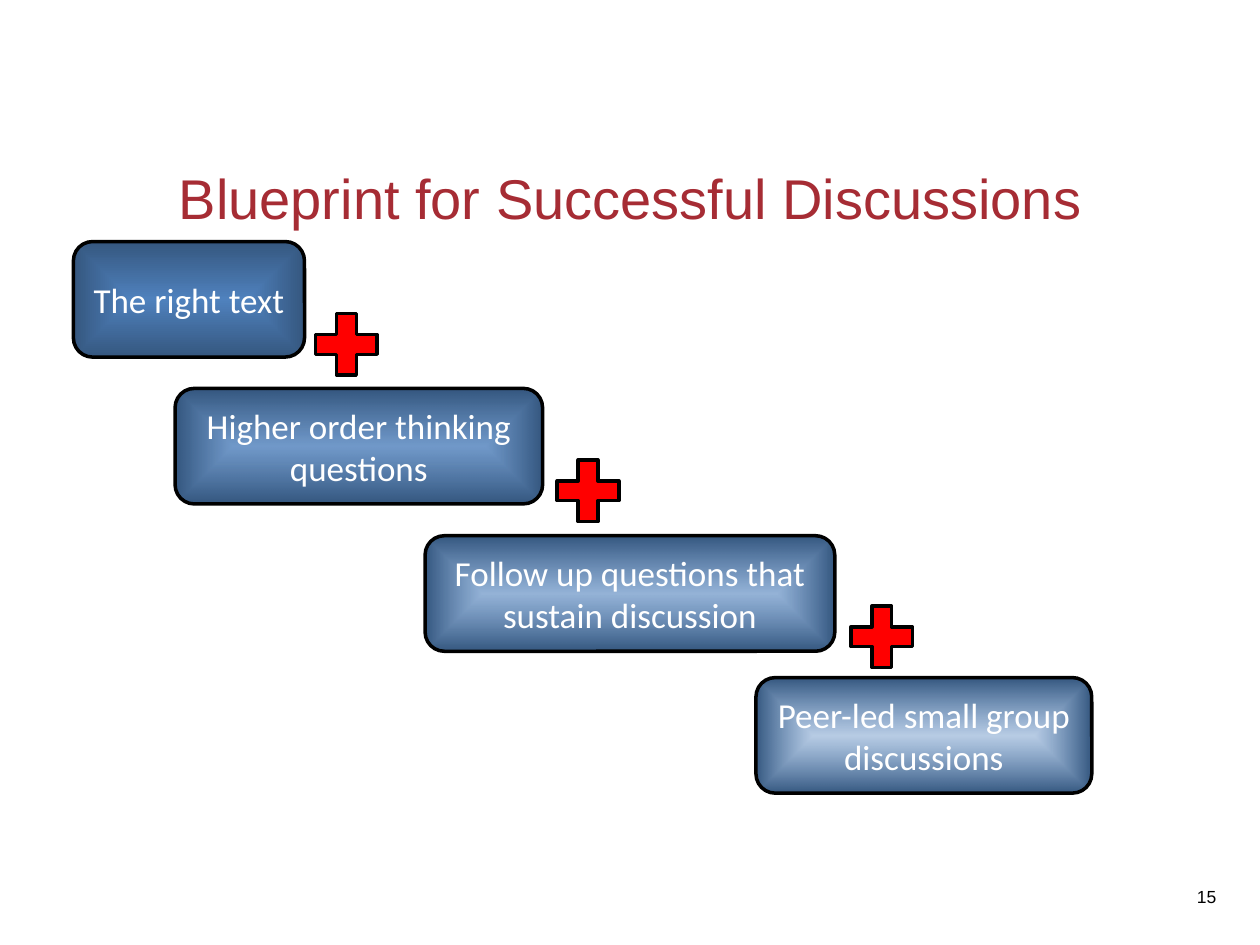
from lxml import etree
from pptx import Presentation
from pptx.dml.color import RGBColor
from pptx.enum.shapes import MSO_SHAPE as Shape
from pptx.enum.text import MSO_ANCHOR as Anchor, PP_ALIGN as Align
from pptx.oxml import parse_xml
from pptx.oxml.ns import nsdecls, qn
from pptx.util import Cm, Pt

WHITE = RGBColor(0xFF, 0xFF, 0xFF)
BLACK = RGBColor(0, 0, 0)
RED = RGBColor(0xFF, 0, 0)
WINE = RGBColor(0xA6, 0x2C, 0x34)
BLUE = RGBColor(0x4F, 0x81, 0xBD)
NAVY = RGBColor(0x35, 0x57, 0x7F)


def write(shape, text, size=20, font="Calibri", color=WHITE, align=Align.CENTER):
    frame = shape.text_frame
    frame.word_wrap = True
    frame.vertical_anchor = Anchor.MIDDLE
    para = frame.paragraphs[0]
    para.alignment = align
    run = para.add_run()
    run.text = text
    run.font.size = Pt(size)
    run.font.name = font
    run.font.color.rgb = color


def glow(shape, alpha):
    """Fill from a blue centre of the given opacity (percent) to navy edges."""
    fill = shape.fill
    fill.gradient()
    for stop, color, pos in zip(fill.gradient_stops, (BLUE, NAVY), (0, 1)):
        stop.color.rgb = color
        stop.position = pos
    grad = shape._element.spPr.find(qn("a:gradFill"))
    if alpha < 100:
        tint = grad.find(".//" + qn("a:srgbClr"))
        etree.SubElement(tint, qn("a:alpha")).set("val", str(alpha * 1000))
    grad.replace(grad.find(qn("a:lin")), parse_xml(
        f'<a:path {nsdecls("a")} path="rect">'
        '<a:fillToRect l="50000" t="50000" r="50000" b="50000"/></a:path>'))


deck = Presentation()
deck.slide_width, deck.slide_height = Cm(25.4), Cm(19.05)
slide = deck.slides.add_slide(deck.slide_layouts[6])
shapes = slide.shapes

title = shapes.add_textbox(Cm(1.07), Cm(3.18), Cm(23.29), Cm(1.6))
write(title, "Blueprint for Successful Discussions", size=32, font="Arial", color=WINE)
number = shapes.add_textbox(Cm(23.7), Cm(17.73), Cm(1.07), Cm(0.69))
write(number, "15", size=10, font="Arial", color=BLACK, align=Align.RIGHT)

# left, top, width, opacity of the centre, text
steps = [
    (1.48, 4.87, 4.66, 100, "The right text"),
    (3.53, 7.83, 7.41, 80, "Higher order thinking questions"),
    (8.57, 10.8, 8.26, 60, "Follow up questions that sustain discussion"),
    (15.24, 13.66, 6.77, 40, "Peer-led small group discussions"),
]
for left, top, width, alpha, text in steps:
    box = shapes.add_shape(Shape.ROUNDED_RECTANGLE,
                           Cm(left), Cm(top), Cm(width), Cm(2.33))
    box.shadow.inherit = False
    glow(box, alpha)
    box.line.color.rgb = BLACK
    box.line.width = Pt(2)
    write(box, text)

for left, top in [(6.14, 6.1), (11.01, 9.05), (16.93, 11.99)]:
    plus = shapes.add_shape(Shape.MATH_PLUS, Cm(left), Cm(top), Cm(1.69), Cm(1.69))
    plus.shadow.inherit = False
    plus.fill.solid()
    plus.fill.fore_color.rgb = RED
    plus.line.color.rgb = BLACK
    plus.line.width = Pt(2)

deck.save("out.pptx")
